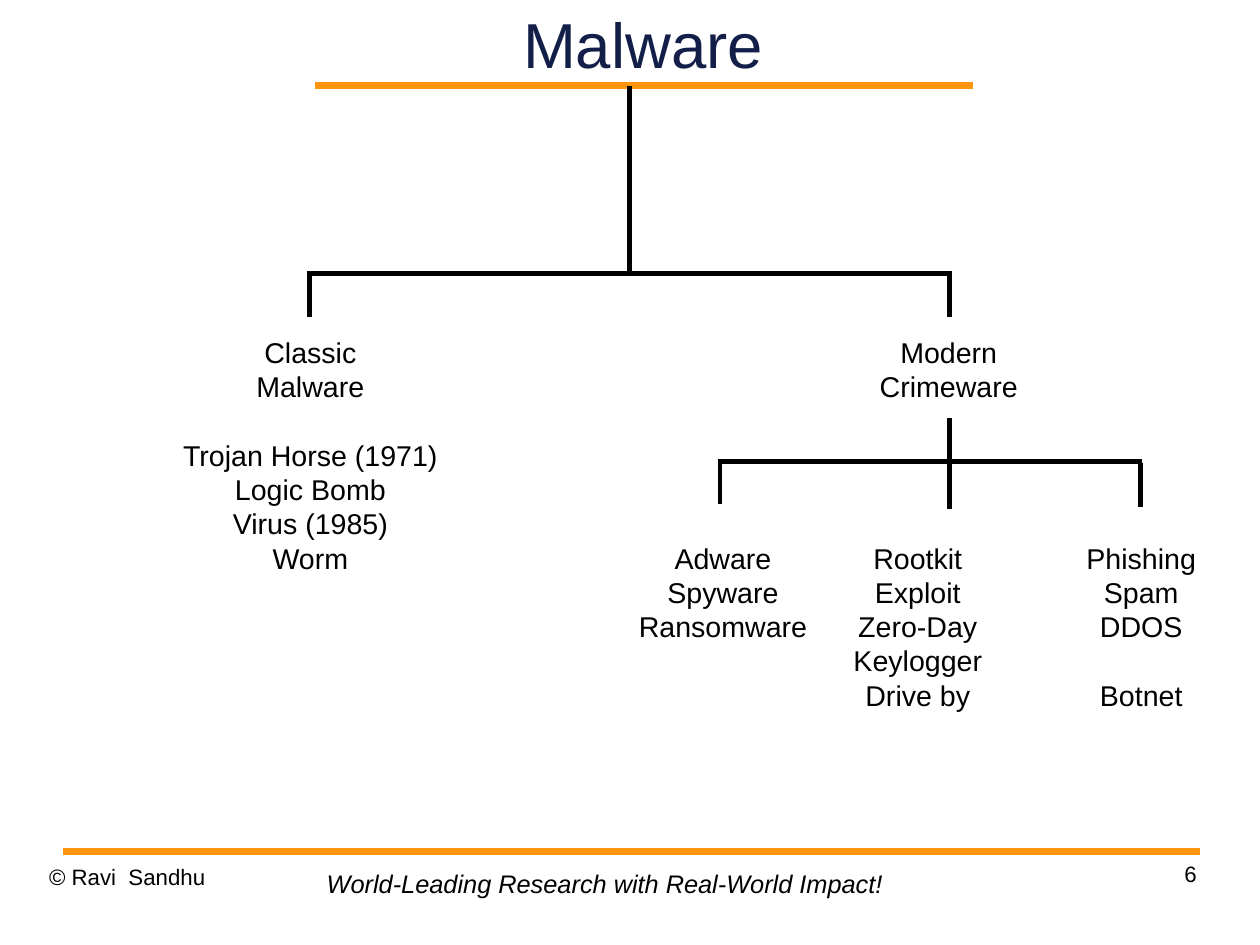
"""Build the Malware taxonomy slide."""
from dataclasses import dataclass

from pptx import Presentation
from pptx.dml.color import RGBColor
from pptx.enum.shapes import MSO_CONNECTOR
from pptx.enum.text import MSO_ANCHOR, MSO_AUTO_SIZE, PP_ALIGN
from pptx.oxml.ns import qn
from pptx.util import Cm, Inches, Pt


@dataclass(frozen=True)
class Theme:
    font: str = "Arial"
    ink: RGBColor = RGBColor(0x00, 0x00, 0x00)
    navy: RGBColor = RGBColor(0x13, 0x1F, 0x49)
    orange: RGBColor = RGBColor(0xFF, 0x95, 0x0E)
    title_size: int = 40
    label_size: int = 18
    slogan_size: int = 16
    footer_size: int = 14
    label_pitch: float = 21.6
    rule_width: float = 4.31
    branch_width: float = 3


THEME = Theme()


def add_line(slide, start, end, color=THEME.ink, width=THEME.branch_width):
    line = slide.shapes.add_connector(
        MSO_CONNECTOR.STRAIGHT, *(Inches(n) for n in (*start, *end)))
    line.line.color.rgb = color
    line.line.width = Pt(width)
    properties = line.element.spPr
    properties.append(properties.makeelement(qn("a:effectLst"), {}))


def add_run(paragraph, text, size, color=THEME.ink, italic=False):
    run = paragraph.add_run()
    run.text = text
    run.font.name = THEME.font
    run.font.size = Pt(size)
    run.font.color.rgb = color
    run.font.italic = italic


def set_frame(frame, inset=(0, 0), wrap=True, anchor=MSO_ANCHOR.TOP):
    frame.margin_left = frame.margin_right = Inches(inset[0])
    frame.margin_top = frame.margin_bottom = Inches(inset[1])
    frame.word_wrap = wrap
    frame.vertical_anchor = anchor
    frame.auto_size = MSO_AUTO_SIZE.NONE


def add_box(slide, area, **frame_options):
    frame = slide.shapes.add_textbox(*(Inches(n) for n in area)).text_frame
    set_frame(frame, **frame_options)
    return frame


def add_title(slide, text):
    title = slide.shapes.title
    title.left, title.top = Inches(2.41), Inches(0)
    title.width, title.height = Inches(6.43), Inches(0.75)
    set_frame(title.text_frame, anchor=MSO_ANCHOR.MIDDLE)
    paragraph = title.text_frame.paragraphs[0]
    paragraph.alignment = PP_ALIGN.CENTER
    add_run(paragraph, text, THEME.title_size, THEME.navy)


def add_footer(slide, area, text, align=PP_ALIGN.LEFT):
    paragraph = add_box(slide, area).paragraphs[0]
    paragraph.alignment = align
    add_run(paragraph, text, THEME.footer_size)


def add_slogan(slide, text):
    frame = add_box(slide, (2.76, 7.55, 5.08, 0.37),
                    inset=(0.1, 0.05), wrap=False)
    add_run(frame.paragraphs[0], text, THEME.slogan_size, italic=True)


def add_category(slide, area, groups):
    """Stack centred names, leaving one line of space between groups."""
    frame = add_box(slide, area, inset=(0.1, 0.05), wrap=False)
    paragraph = None
    for group in groups:
        for position, name in enumerate(group):
            first = paragraph is None
            paragraph = frame.paragraphs[0] if first else frame.add_paragraph()
            paragraph.alignment = PP_ALIGN.CENTER
            paragraph.line_spacing = Pt(THEME.label_pitch)
            if position == 0 and not first:
                paragraph.space_before = Pt(THEME.label_pitch)
            add_run(paragraph, name, THEME.label_size)


def add_branch(slide, bar, trunk, drops, drop_length=0.39):
    """Draw a trunk, its crossbar and a drop to each child."""
    left, right, level = bar
    x, top, bottom = trunk
    add_line(slide, (x, top), (x, bottom))
    add_line(slide, (left, level), (right, level))
    for child, start in drops:
        add_line(slide, (child, start), (child, start + drop_length))


def main():
    deck = Presentation()
    deck.slide_width = Cm(28)
    deck.slide_height = Cm(21)
    slide = deck.slides.add_slide(deck.slide_layouts[5])

    for left, right, level in ((2.76, 8.51, 0.75), (0.55, 10.5, 7.45)):
        add_line(slide, (left, level), (right, level),
                 THEME.orange, THEME.rule_width)
    add_title(slide, "Malware")
    add_footer(slide, (0.43, 7.55, 2.57, 0.57), "© Ravi  Sandhu")
    add_footer(slide, (7.9, 7.53, 2.57, 0.57), "6", PP_ALIGN.RIGHT)
    add_slogan(slide, "World-Leading Research with Real-World Impact!")

    add_branch(slide, (2.69, 8.33, 2.39), (5.51, 0.75, 2.37),
               ((2.71, 2.38), (8.31, 2.38)))
    add_branch(slide, (6.32, 9.99, 4.04), (8.31, 3.66, 4.06),
               ((6.3, 4.02), (8.31, 4.06), (9.98, 4.05)))

    categories = (
        ((1.49, 2.88, 2.45, 2.22),
         (("Classic", "Malware"),
          ("Trojan Horse (1971)", "Logic Bomb", "Virus (1985)", "Worm"))),
        ((7.59, 2.88, 1.42, 1.01), (("Modern", "Crimeware"),)),
        ((5.48, 4.68, 1.69, 1.01), (("Adware", "Spyware", "Ransomware"),)),
        ((7.36, 4.68, 1.34, 1.62),
         (("Rootkit", "Exploit", "Zero-Day", "Keylogger", "Drive by"),)),
        ((9.4, 4.68, 1.17, 1.62),
         (("Phishing", "Spam", "DDOS"), ("Botnet",))),
    )
    for area, groups in categories:
        add_category(slide, area, groups)

    deck.save("out.pptx")


if __name__ == "__main__":
    main()
